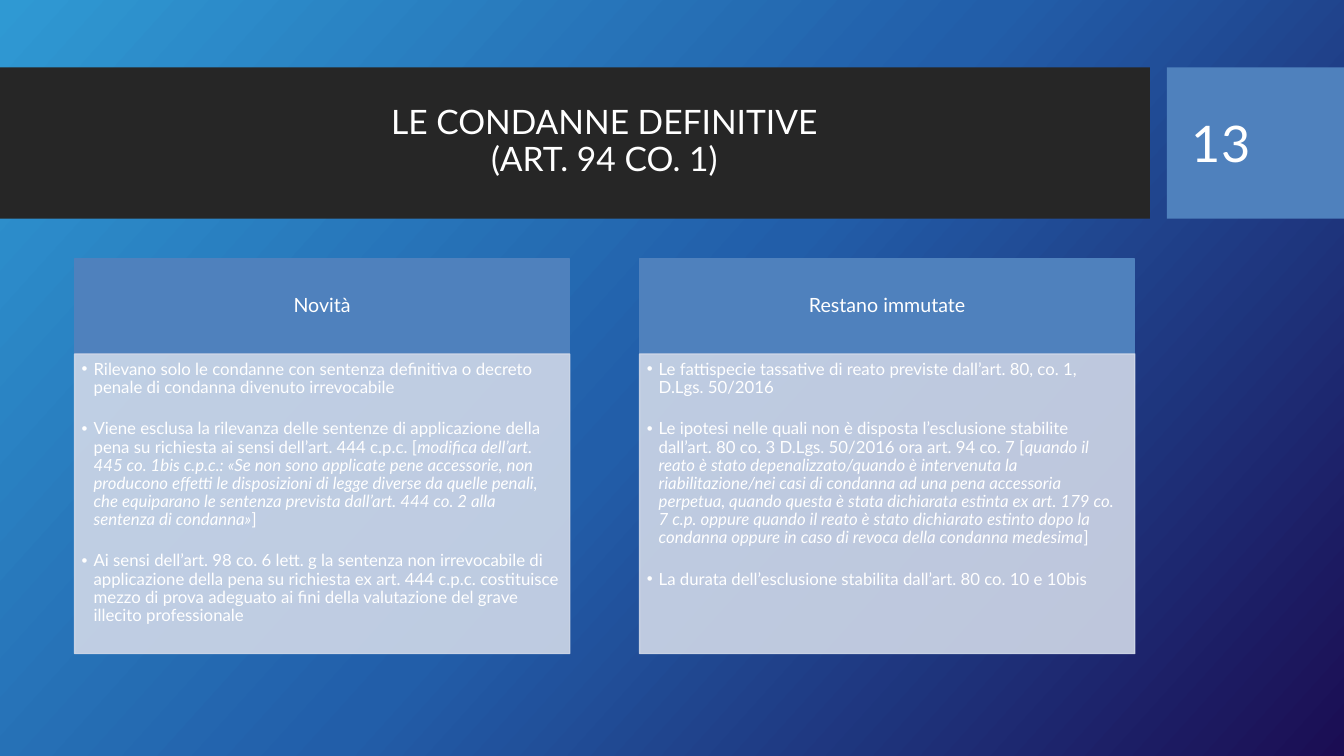
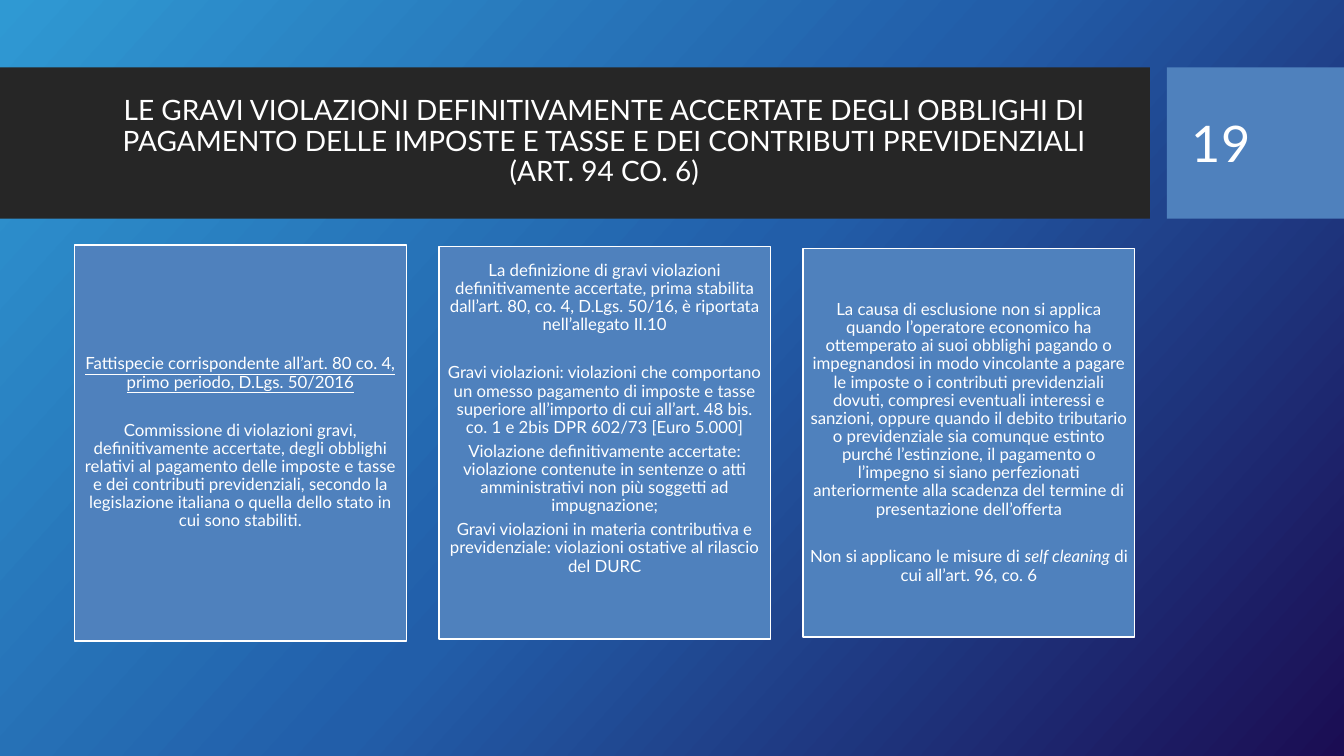
"""Build two slides on grounds for exclusion from public tenders."""
from copy import deepcopy

from lxml import etree
from pptx import Presentation
from pptx import util as u
from pptx.dml.color import RGBColor
from pptx.enum import shapes, text
from pptx.oxml.ns import qn

COLORS = {
    "sky": "2F99D3", "blue": "225EA9", "night": "1B0D53",
    "band": "262626", "accent": "4F81BD", "pale": "D0D8E8", "white": "FFFFFF",
}
FONT = "Lato"
LEFT = 1.88
RIGHT = 28.6
CENTER, START = text.PP_ALIGN.CENTER, text.PP_ALIGN.LEFT
MIDDLE, TOP = text.MSO_ANCHOR.MIDDLE, text.MSO_ANCHOR.TOP


def rgb(name):
    return RGBColor.from_string(COLORS[name])


class Deck:
    def __init__(self):
        self.prs = Presentation()
        self.prs.slide_width, self.prs.slide_height = u.Cm(33.87), u.Cm(19.05)
        self.s = None

    def slide(self, title, size, number):
        self.s = self.prs.slides.add_slide(self.prs.slide_layouts[6])
        self.background()
        self.rect(0, 1.7, 28.98, 3.81, "band")
        self.rect(29.41, 1.7, 4.46, 3.81, "accent")
        self.put_text(self.box(LEFT, 2.08, 26.7, 3), [title], size)
        self.put_text(self.box(29.79, 2.08, 3.2, 3.02), [number], 36, align=START, spacing=1)

    def background(self):
        fill = self.s.background.fill
        fill.gradient()
        fill.gradient_angle = 318
        first, last = fill.gradient_stops
        first.color.rgb, last.color.rgb = rgb("sky"), rgb("night")
        first.position, last.position = 0, 1
        stops = next(self.s._element.iter(qn("a:gsLst")))
        mid = deepcopy(stops[0])
        mid.set("pos", "50000")
        mid[0].set("val", COLORS["blue"])
        stops.insert(1, mid)

    def rect(self, x, y, w, h, fill, line=None, alpha=None):
        sp = self.s.shapes.add_shape(
            shapes.MSO_SHAPE.RECTANGLE, u.Cm(x), u.Cm(y), u.Cm(w), u.Cm(h))
        sp.shadow.inherit = False
        sp.fill.solid()
        sp.fill.fore_color.rgb = rgb(fill)
        if line:
            sp.line.color.rgb = rgb(line)
            sp.line.width = u.Pt(1)
        else:
            sp.line.fill.background()
        if alpha:
            for color in sp._element.spPr.iter(qn("a:srgbClr")):
                etree.SubElement(color, qn("a:alpha")).set("val", str(alpha * 1000))
        return sp

    def box(self, x, y, w, h):
        return self.s.shapes.add_textbox(u.Cm(x), u.Cm(y), u.Cm(w), u.Cm(h))

    def put_text(self, sp, paragraphs, size, align=CENTER, anchor=MIDDLE, spacing=0.9,
                 insets=(0.25, 0.13, 0.25, 0.13), gaps=(0,), emphasis="italic", bullet=False):
        tf = sp.text_frame
        tf.word_wrap = True
        tf.vertical_anchor = anchor
        tf.margin_left, tf.margin_top, tf.margin_right, tf.margin_bottom = map(u.Cm, insets)
        tf.text = "\n".join(paragraphs).replace("*", "")
        for p, content, gap in zip(tf.paragraphs, paragraphs, gaps):
            if bullet:
                self.bullet(p)
            p.alignment = align
            p.line_spacing = spacing
            p.space_before = u.Pt(gap)
            if "*" in content:
                self.emphasize(p, content, emphasis)
            for r in p.runs:
                r.font.name = FONT
                r.font.size = u.Pt(size)
                r.font.color.rgb = rgb("white")

    def emphasize(self, p, content, emphasis):
        p.clear()
        for i, part in enumerate(content.split("*")):
            if part:
                r = p.add_run()
                r.text = part
                setattr(r.font, emphasis, i % 2 == 1)

    def bullet(self, p):
        pPr = p._p.get_or_add_pPr()
        pPr.set("marL", str(u.Cm(0.3)))
        pPr.set("indent", str(-u.Cm(0.3)))
        etree.SubElement(pPr, qn("a:buFont")).set("typeface", "Arial")
        etree.SubElement(pPr, qn("a:buChar")).set("char", "•")

    def panel(self, x, w, heading, items):
        self.put_text(self.rect(x, 6.53, w, 2.39, "accent", "accent"), [heading], 14)
        body = self.rect(x, 8.92, w, 7.55, "pale", "pale", alpha=90)
        self.put_text(body, items, 12, align=START, anchor=TOP, bullet=True,
                      insets=(0.18, 0.18, 0.23, 0.25), gaps=(0, 16.5, 16.5))

    def card(self, x, w, h, paragraphs, emphasis="italic", bottom=0.13):
        sp = self.rect(x, 11.16 - h / 2, w, h, "accent", "white")
        self.put_text(sp, paragraphs, 12, insets=(0.13, 0.13, 0.13, bottom),
                      gaps=(0, 21.3, 4.2, 4.2), emphasis=emphasis)


def columns(count, width):
    pitch = (RIGHT - LEFT - width) / (count - 1)
    return [LEFT + i * pitch for i in range(count)]


PANELS = [
    ("Novità", [
        "Rilevano solo le condanne con sentenza definitiva o decreto penale di condanna "
        "divenuto irrevocabile",
        "Viene esclusa la rilevanza delle sentenze di applicazione della pena su richiesta ai "
        "sensi dell’art. 444 c.p.c. [*modifica dell’art. 445 co. 1bis c.p.c.: «Se non sono "
        "applicate pene accessorie, non producono effetti le disposizioni di legge diverse da "
        "quelle penali, che equiparano le sentenza prevista dall’art. 444 co. 2 alla sentenza "
        "di condanna»*]",
        "Ai sensi dell’art. 98 co. 6 lett. g la sentenza non irrevocabile di applicazione della "
        "pena su richiesta ex art. 444 c.p.c. costituisce mezzo di prova adeguato ai fini della "
        "valutazione del grave illecito professionale",
    ]),
    ("Restano immutate", [
        "Le fattispecie tassative di reato previste dall’art. 80, co. 1, D.Lgs. 50/2016",
        "Le ipotesi nelle quali non è disposta l’esclusione stabilite dall’art. 80 co. 3 D.Lgs. "
        "50/2016 ora art. 94 co. 7 [*quando il reato è stato depenalizzato/quando è intervenuta "
        "la riabilitazione/nei casi di condanna ad una pena accessoria perpetua, quando questa "
        "è stata dichiarata estinta ex art. 179 co. 7 c.p. oppure quando il reato è stato "
        "dichiarato estinto dopo la condanna oppure in caso di revoca della condanna medesima*]",
        "La durata dell’esclusione stabilita dall’art. 80 co. 10 e 10bis",
    ]),
]

CARDS = [
    dict(h=9.98, emphasis="underline", paragraphs=[
        "*Fattispecie corrispondente all’art. 80 co. 4, primo periodo, D.Lgs. 50/2016*",
        "Commissione di violazioni gravi, definitivamente accertate, degli obblighi relativi al "
        "pagamento delle imposte e tasse e dei contributi previdenziali, secondo la legislazione "
        "italiana o quella dello stato in cui sono stabiliti.",
    ]),
    dict(h=9.88, bottom=1.34, paragraphs=[
        "La definizione di gravi violazioni definitivamente accertate, prima stabilita "
        "dall’art. 80, co. 4, D.Lgs. 50/16, è riportata nell’allegato II.10",
        "Gravi violazioni: violazioni che comportano un omesso pagamento di imposte e tasse "
        "superiore all’importo di cui all’art. 48 bis. co. 1 e 2bis DPR 602/73 [Euro 5.000]",
        "Violazione definitivamente accertate: violazione contenute in sentenze o atti "
        "amministrativi non più soggetti ad impugnazione;",
        "Gravi violazioni in materia contributiva e previdenziale: violazioni ostative al "
        "rilascio del DURC",
    ]),
    dict(h=9.78, paragraphs=[
        "La causa di esclusione non si applica quando l’operatore economico ha ottemperato ai "
        "suoi obblighi pagando o impegnandosi in modo vincolante a pagare le imposte o i "
        "contributi previdenziali dovuti, compresi eventuali interessi e sanzioni, oppure quando "
        "il debito tributario o previdenziale sia comunque estinto purché l’estinzione, il "
        "pagamento o l’impegno si siano perfezionati anteriormente alla scadenza del termine di "
        "presentazione dell’offerta",
        "Non si applicano le misure di *self cleaning* di cui all’art. 96, co. 6",
    ]),
]


def main():
    deck = Deck()
    deck.slide("LE CONDANNE DEFINITIVE\v(ART. 94 CO. 1)", 24, "13")
    for x, (heading, items) in zip(columns(2, 12.48), PANELS):
        deck.panel(x, 12.48, heading, items)

    deck.slide("LE GRAVI VIOLAZIONI DEFINITIVAMENTE ACCERTATE DEGLI OBBLIGHI DI PAGAMENTO DELLE "
               "IMPOSTE E TASSE E DEI CONTRIBUTI PREVIDENZIALI\v(ART. 94 CO. 6)", 20, "19")
    for x, card in zip(columns(3, 8.36), CARDS):
        deck.card(x, 8.36, **card)
    deck.prs.save("out.pptx")


if __name__ == "__main__":
    main()
